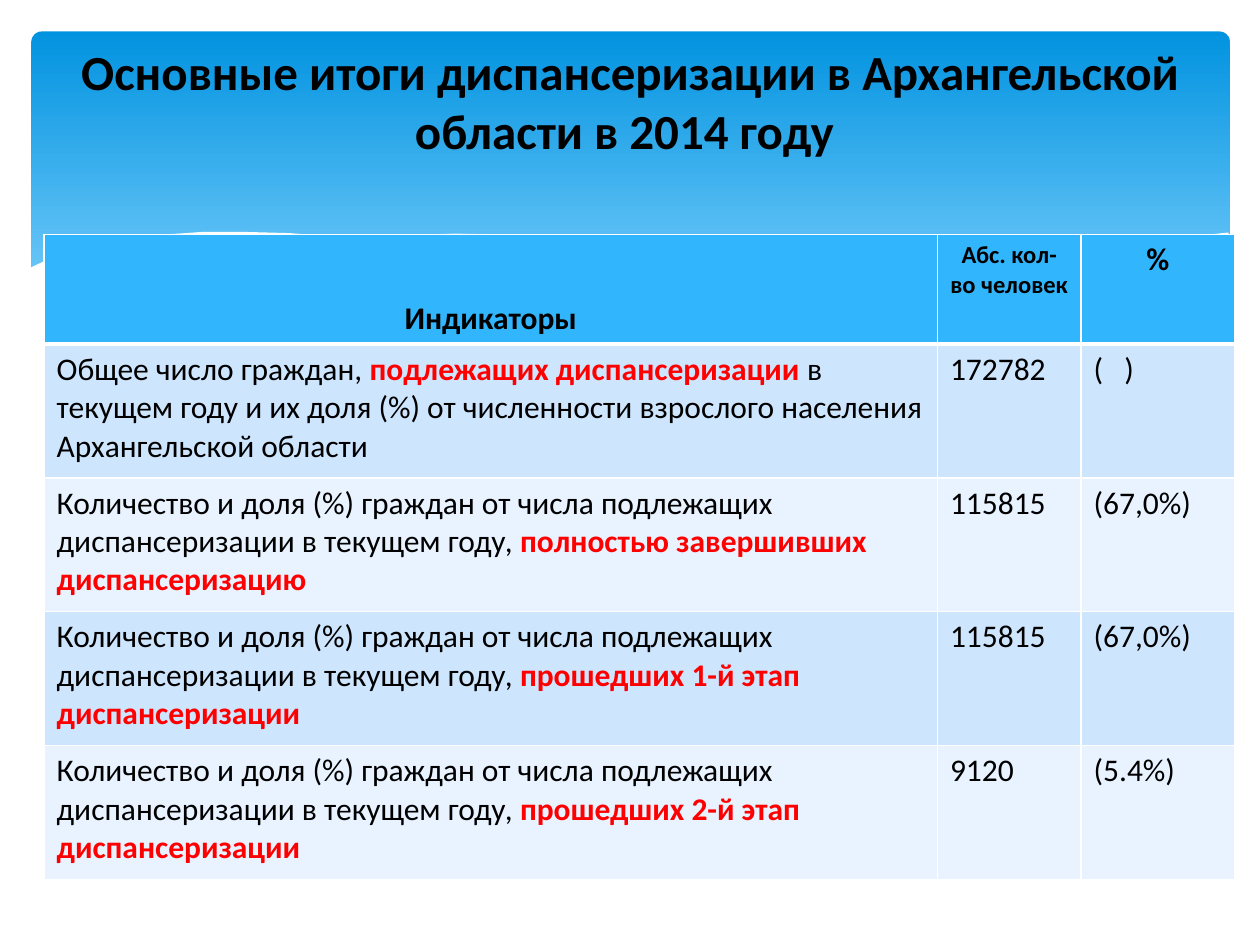
from dataclasses import dataclass

import pptx
import pptx.dml.color
import pptx.enum.shapes
import pptx.enum.text
import pptx.oxml
import pptx.oxml.ns
import pptx.util
from pptx.util import Inches


@dataclass(frozen=True)
class Theme:
    font: str = "Calibri"
    title: int = 28
    body: int = 18
    small: int = 14
    text: str = "000000"
    accent: str = "FF0000"
    white: str = "FFFFFF"
    sky_top: str = "0293E0"
    sky_bottom: str = "83D3FE"
    wave: str = "C6E7FC"
    header: str = "31B6FD"
    bands: tuple = ("CEE5FE", "E8F3FF")


T = Theme()
CENTER = pptx.enum.text.PP_ALIGN.CENTER
LEFT = pptx.enum.text.PP_ALIGN.LEFT

# Wave outlines, in inches from the corner of the wave box
RIGHT_WAVE = [(9.52, .16), (8.83, .29), (8.38, .39), (7.3, .64), (6.38, .81), (6.96, .88),
              (7.46, .93), (7.91, .94), (8.49, .9), (8.98, .81), (9.26, .73), (9.53, .63),
              (9.53, .16)]
MIDDLE_WAVE = [(8.7, .89), (7.84, .76), (6.83, .56), (6.06, .38), (5.32, .21), (4.66, .1),
               (3.97, .03), (3.38, .01), (2.9, .04), (2.63, .07), (3.39, .19), (4.26, .38),
               (5.43, .64), (6.27, .8), (6.99, .9), (7.73, .94), (8.25, .93)]
LONG_LINE = [(2.86, .11), (3.21, .06), (3.78, .03), (4.46, .05), (5.33, .13), (6.13, .24),
             (7.04, .42), (8.08, .67), (8.84, .88)]
SHORT_LINE = [(5.9, .73), (6.72, .51), (7.83, .26), (8.72, .1), (9.52, .01)]
WHITE_WAVE = [(9.54, .62), (9.36, .69), (8.97, .81), (8.52, .89), (7.86, .93), (7.21, .9),
              (6.45, .81), (5.56, .66), (4.24, .36), (3.42, .18), (2.69, .06), (2.07, .01),
              (1.7, 0), (1.38, 0), (.96, .03), (.62, .09), (.36, .15), (.17, .21), (0, .29),
              (0, 1.45), (9.54, 1.45)]

COMMON = "Количество и доля (%) граждан от числа подлежащих диспансеризации в текущем году, "
# Each label is a list of (text, highlighted) runs
ROWS = [
    ([("Общее число граждан, ", False), ("подлежащих диспансеризации ", True),
      ("в текущем году и их доля (%) от численности взрослого населения "
       "Архангельской области", False)], "172782", "(   )"),
    ([(COMMON, False), ("полностью завершивших диспансеризацию", True)], "115815", "(67,0%)"),
    ([(COMMON, False), ("прошедших 1-й этап диспансеризации", True)], "115815", "(67,0%)"),
    ([(COMMON, False), ("прошедших 2-й этап диспансеризации", True)], "9120", "(5.4%)"),
]


def rgb(value):
    return pptx.dml.color.RGBColor.from_string(value)


def add_run(p, text, size, color=T.text, bold=False):
    r = p.add_run()
    r.text = text
    r.font.name, r.font.size, r.font.bold = T.font, pptx.util.Pt(size), bold
    r.font.color.rgb = rgb(color)


def add_banner(s, left, top, width, height):
    sp = s.shapes.add_shape(pptx.enum.shapes.MSO_SHAPE.ROUNDED_RECTANGLE,
                            Inches(left), Inches(top), Inches(width), Inches(height))
    sp.shadow.inherit = False
    sp.adjustments[0] = 0.03
    sp.line.fill.background()
    sp.fill.gradient()
    sp.fill.gradient_angle = 270
    for stop, color, position in zip(sp.fill.gradient_stops, (T.sky_top, T.sky_bottom), (0, 0.9)):
        stop.color.rgb = rgb(color)
        stop.position = position


def add_wave(s, left, top, points, fill=None, opacity=100):
    """Draw a filled wave, or an open white hairline when no fill is given."""
    (x, y), *rest = [(Inches(left + dx), Inches(top + dy)) for dx, dy in points]
    builder = s.shapes.build_freeform(x, y)
    builder.add_line_segments(rest, close=fill is not None)
    sp = builder.convert_to_shape()
    sp.shadow.inherit = False
    if fill is None:
        sp.fill.background()
        sp.line.color.rgb = rgb(T.white)
        sp.line.width = 0
        return
    sp.line.fill.background()
    sp.fill.solid()
    sp.fill.fore_color.rgb = rgb(fill)
    if opacity < 100:
        color = sp.fill._xPr.find(".//" + pptx.oxml.ns.qn("a:srgbClr"))
        color.append(pptx.oxml.parse_xml(
            f'<a:alpha {pptx.oxml.ns.nsdecls("a")} val="{opacity * 1000}"/>'))


def add_waves(s, left, top):
    add_wave(s, left, top, RIGHT_WAVE, T.wave, 29)
    add_wave(s, left, top, MIDDLE_WAVE, T.wave, 40)
    add_wave(s, left, top, LONG_LINE)
    add_wave(s, left, top, SHORT_LINE)
    add_wave(s, left, top, WHITE_WAVE, T.white)


def add_title(s, left, top, width, height):
    tf = s.shapes.add_textbox(Inches(left), Inches(top), Inches(width), Inches(height)).text_frame
    tf.word_wrap = True
    tf.vertical_anchor = pptx.enum.text.MSO_ANCHOR.MIDDLE
    p = tf.paragraphs[0]
    p.alignment = CENTER
    add_run(p, "Основные итоги диспансеризации в Архангельской области в 2014 году ",
            T.title, bold=True)


def style_cell(cell, fill, top=1, bottom=1):
    """Give a cell white borders, with widths in points, and a plain fill."""
    tc_pr = cell._tc.get_or_add_tcPr()
    for side, width in (("L", 1), ("R", 1), ("T", top), ("B", bottom)):
        tc_pr.append(pptx.oxml.parse_xml(
            f'<a:ln{side} {pptx.oxml.ns.nsdecls("a")} w="{pptx.util.Pt(width)}"><a:solidFill>'
            f'<a:srgbClr val="{T.white}"/></a:solidFill></a:ln{side}>'))
    cell.fill.solid()
    cell.fill.fore_color.rgb = rgb(fill)


def add_results_table(s, left, top, width, height):
    table = s.shapes.add_table(len(ROWS) + 1, 3, Inches(left), Inches(top),
                               Inches(width), Inches(height)).table
    header_height, number_widths = 0.87, (1.14, 1.22)
    column_widths = (width - sum(number_widths), *number_widths)
    for column, column_width in zip(table.columns, column_widths):
        column.width = Inches(column_width)
    for i, row in enumerate(table.rows):
        row.height = Inches((height - header_height) / len(ROWS) if i else header_height)

    headers = (("Индикаторы", T.body), ("Абс. кол-во человек", T.small), ("%", T.body))
    for j, (text, size) in enumerate(headers):
        cell = table.cell(0, j)
        style_cell(cell, T.header, bottom=3)
        p = cell.text_frame.paragraphs[0]
        p.alignment = CENTER
        add_run(p, text, size, bold=True)
    table.cell(0, 0).vertical_anchor = pptx.enum.text.MSO_ANCHOR.BOTTOM

    for i, (label, count, share) in enumerate(ROWS, start=1):
        for j, runs in enumerate((label, [(count, False)], [(share, False)])):
            cell = table.cell(i, j)
            style_cell(cell, T.bands[(i - 1) % 2], top=3 if i == 1 else 1)
            p = cell.text_frame.paragraphs[0]
            p.alignment = LEFT
            for text, highlighted in runs:
                add_run(p, text, T.body, T.accent if highlighted else T.text, highlighted)


def main():
    prs = pptx.Presentation()
    prs.slide_width, prs.slide_height = Inches(10), Inches(7.5)
    s = prs.slides.add_slide(prs.slide_layouts[6])
    add_banner(s, 0.25, 0.25, 9.51, 2.7)
    add_waves(s, 0.23, 1.84)
    add_title(s, 0.5, 0.37, 9, 0.86)
    add_results_table(s, 0.35, 1.86, 9.45, 5.12)
    prs.save("out.pptx")


if __name__ == "__main__":
    main()
